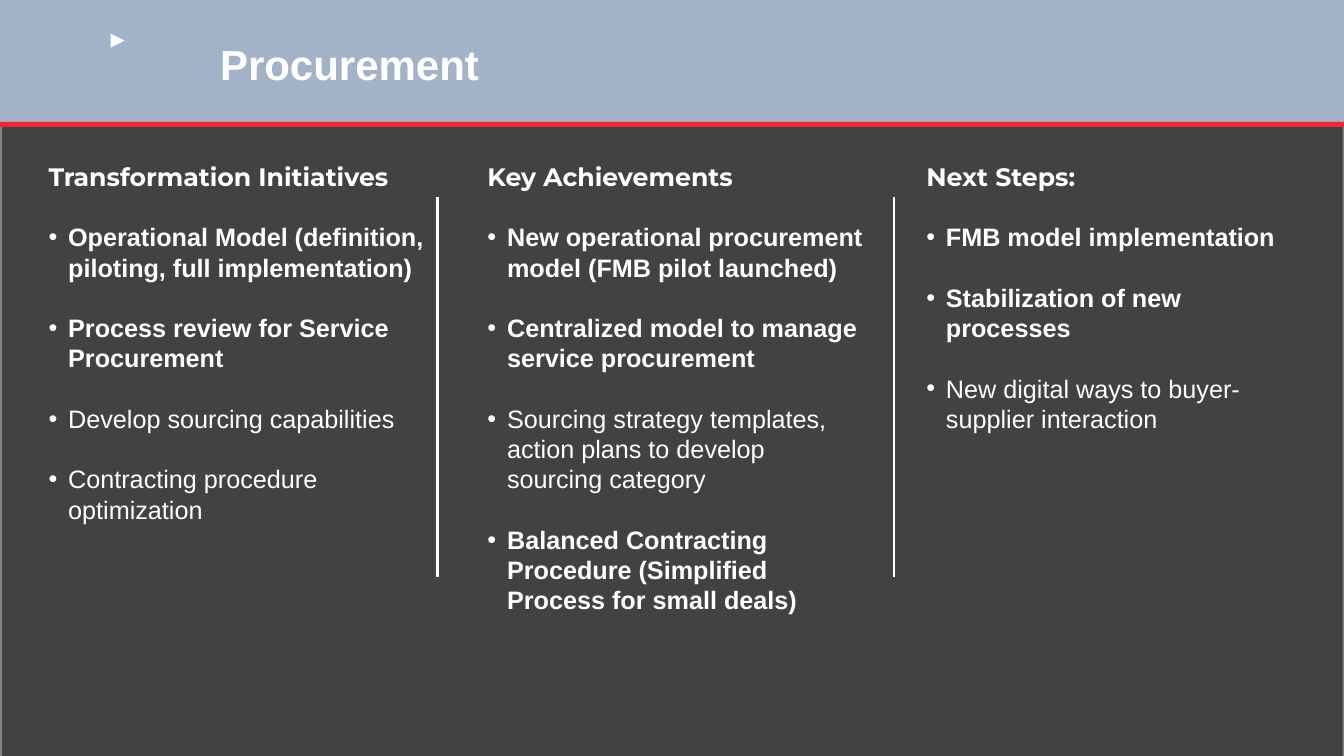
from lxml.etree import SubElement
from pptx import Presentation
from pptx.dml.color import RGBColor
from pptx.enum.shapes import MSO_CONNECTOR, MSO_SHAPE
from pptx.enum.text import MSO_ANCHOR, MSO_AUTO_SIZE, PP_ALIGN
from pptx.oxml.ns import qn
from pptx.util import Pt

TITLE = "Procurement"
# heading, then (text, bold) for each point
COLUMNS = [
    ("Transformation Initiatives", [
        ("Operational Model (definition, piloting, full implementation)", True),
        ("Process review for Service Procurement", True),
        ("Develop sourcing capabilities", False),
        ("Contracting procedure optimization", False)]),
    ("Key Achievements", [
        ("New operational procurement model (FMB pilot launched)", True),
        ("Centralized model to manage service procurement", True),
        ("Sourcing strategy templates, action plans to develop sourcing category", False),
        ("Balanced Contracting Procedure (Simplified Process for small deals)", True)]),
    ("Next Steps:", [
        ("FMB model implementation", True),
        ("Stabilization of new processes", True),
        ("New digital ways to buyer-supplier interaction", False)]),
]
WHITE, BLACK, BLUE, RED = "FFFFFF", "000000", "A2B2C8", "EE2737"
# left, top, width, height, colour, opacity in percent
PANELS = [
    (1.5, 0, 959, 540, BLACK, 49),
    (0, 0, 959, 540, BLACK, 49),
    (0, 0, 960, 88.5, BLUE, 100),
    (0, 87, 960, 3.6, RED, 100),
]
RULES = [312.5, 638.6]
LEFT, STEP, TOP, WIDTH, HEIGHT = 27.5, 313.5, 111.6, 285, 334
SIZE, PITCH, INDENT = 18, 21.6, 14


def rgb(code):
    return RGBColor.from_string(code)


def add_panel(slide, kind, box, color, alpha=100):
    """Add a plain filled shape behind the title."""
    panel = slide.shapes.add_shape(kind, *map(Pt, box))
    panel.shadow.inherit = False
    panel.fill.solid()
    panel.fill.fore_color.rgb = rgb(color)
    panel.line.fill.background()
    if alpha < 100:
        tint = panel.element.spPr.find(qn("a:solidFill"))[0]
        SubElement(tint, qn("a:alpha"), val=str(alpha * 1000))
    slide.shapes.title.element.addprevious(panel.element)
    return panel


def place(shape, box, anchor):
    """Move a placeholder and set how its text sits."""
    shape.left, shape.top, shape.width, shape.height = map(Pt, box)
    frame = shape.text_frame
    frame.word_wrap = True
    frame.auto_size = MSO_AUTO_SIZE.NONE
    frame.vertical_anchor = anchor
    return frame


def style(para, face, size, bold):
    para.alignment = PP_ALIGN.LEFT
    for run in para.runs:
        run.font.name = face
        run.font.size = Pt(size)
        run.font.bold = bold
        run.font.color.rgb = rgb(WHITE)


def set_bullet(para, char):
    """Give the paragraph a hanging bullet, or none if char is empty."""
    props = para._p.get_or_add_pPr()
    indent = Pt(INDENT) if char else 0
    props.set("marL", str(indent))
    props.set("indent", str(-indent))
    if not char:
        SubElement(props, qn("a:buNone"))
        return
    tint = SubElement(props, qn("a:buClr"))
    SubElement(tint, qn("a:srgbClr"), val=WHITE)
    SubElement(props, qn("a:buFont"), typeface="Arial")
    SubElement(props, qn("a:buChar"), char=char)


def fill_column(frame, head, points):
    frame.text = "\n".join([head] + [text for text, bold in points])
    bolds = [True] + [bold for text, bold in points]
    for i, (para, bold) in enumerate(zip(frame.paragraphs, bolds)):
        set_bullet(para, "•" if i else "")
        para.line_spacing = Pt(PITCH)
        para.space_before = Pt(PITCH if i else 0)
        para.space_after = Pt(0)
        style(para, "Arial" if i else "Montserrat", SIZE, bold)


def add_rule(slide, x):
    rule = slide.shapes.add_connector(
        MSO_CONNECTOR.STRAIGHT, Pt(x), Pt(140.4), Pt(x), Pt(411.8))
    rule.line.color.rgb = rgb(WHITE)
    rule.line.width = Pt(2)
    SubElement(rule.element.spPr, qn("a:effectLst"))


def main():
    deck = Presentation()
    deck.slide_width, deck.slide_height = Pt(960), Pt(540)
    slide = deck.slides.add_slide(deck.slide_layouts[4])

    for *box, color, alpha in PANELS:
        add_panel(slide, MSO_SHAPE.RECTANGLE, box, color, alpha)
    mark = add_panel(slide, MSO_SHAPE.ISOSCELES_TRIANGLE, (79, 24, 10, 10), WHITE)
    mark.rotation = 90

    title = slide.shapes.title
    frame = place(title, (150, 16, 586, 64), MSO_ANCHOR.MIDDLE)
    frame.text = TITLE
    frame.paragraphs[0].line_spacing = 0.9
    style(frame.paragraphs[0], "Arial", 30, True)

    *bodies, spare = [p for p in slide.placeholders if p.placeholder_format.idx]
    spare.element.getparent().remove(spare.element)
    for i, (body, (head, points)) in enumerate(zip(bodies, COLUMNS)):
        box = (LEFT + i * STEP, TOP, WIDTH, HEIGHT)
        fill_column(place(body, box, MSO_ANCHOR.TOP), head, points)

    for x in RULES:
        add_rule(slide, x)
    deck.save("out.pptx")


if __name__ == "__main__":
    main()
